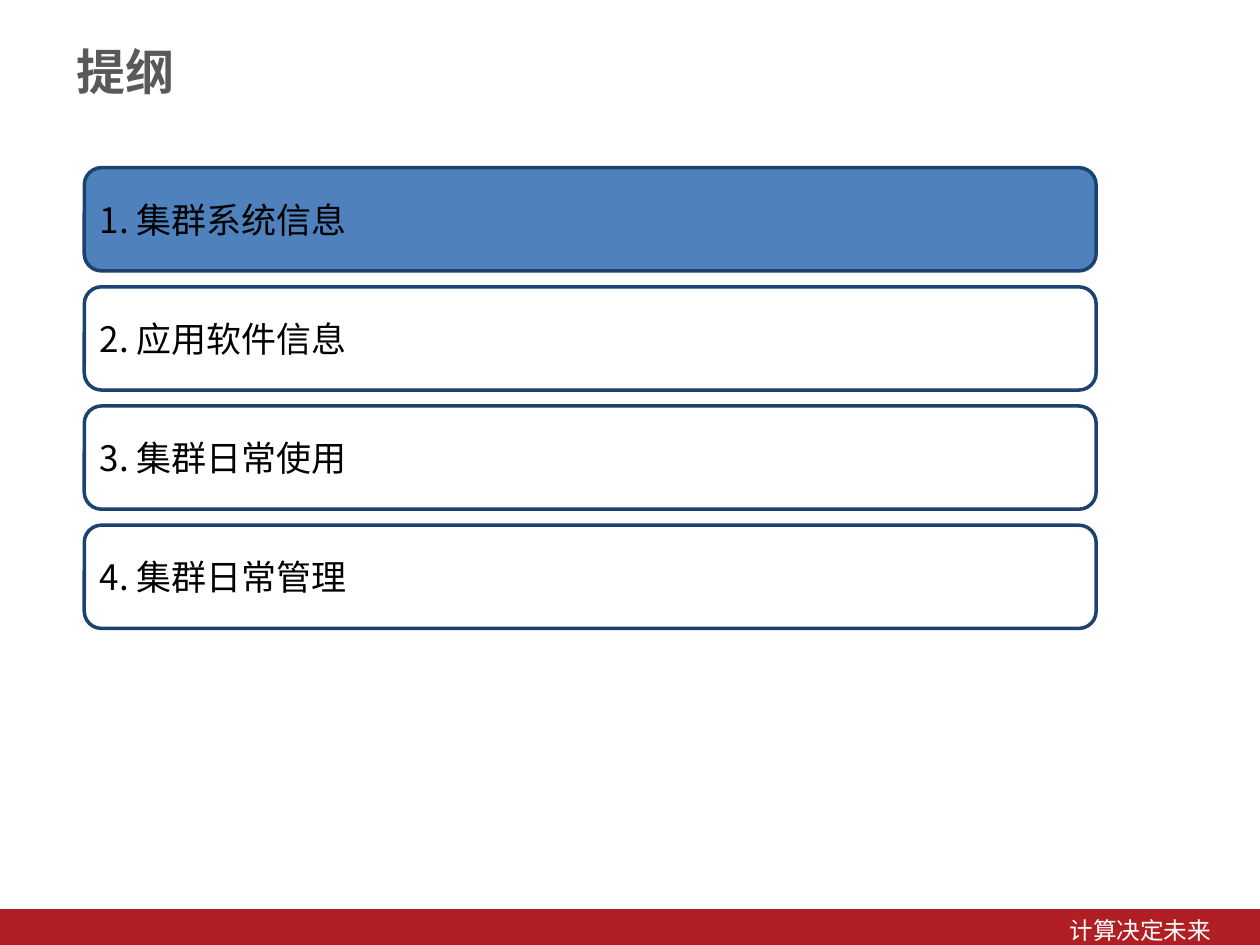
from lxml import etree
from pptx import Presentation
from pptx.dml.color import RGBColor
from pptx.enum.shapes import MSO_SHAPE
from pptx.enum.text import MSO_ANCHOR, PP_ALIGN
from pptx.oxml.ns import qn
from pptx.util import Pt

RECT, ROUNDED = MSO_SHAPE.RECTANGLE, MSO_SHAPE.ROUNDED_RECTANGLE
TOP, MIDDLE = MSO_ANCHOR.TOP, MSO_ANCHOR.MIDDLE
LEFT, RIGHT = PP_ALIGN.LEFT, PP_ALIGN.RIGHT

THEME = {
    "font": "Noto Sans CJK SC",
    "red": RGBColor(0xB0, 0x1F, 0x24),
    "blue": RGBColor(0x4F, 0x81, 0xBD),
    "navy": RGBColor(0x1C, 0x42, 0x71),
    "gray": RGBColor(0x59, 0x59, 0x59),
    "black": RGBColor(0, 0, 0),
    "white": RGBColor(0xFF, 0xFF, 0xFF),
    "title_size": Pt(28),
    "item_size": Pt(20),
    "footer_size": Pt(13.5),
}


def write(box, text, size, color, bold=False, align=LEFT, anchor=TOP, inset=(7.2, 3.6)):
    """Fill a box with one formatted paragraph; inset is (sides, top and bottom)."""
    frame = box.text_frame
    across, down = (Pt(value) for value in inset)
    layout = {"word_wrap": True, "vertical_anchor": anchor, "margin_left": across,
              "margin_right": across, "margin_top": down, "margin_bottom": down}
    for name, value in layout.items():
        setattr(frame, name, value)
    para = frame.paragraphs[0]
    para.alignment = align
    span = para.add_run()
    span.text = text
    for name, value in {"name": THEME["font"], "size": size, "bold": bold}.items():
        setattr(span.font, name, value)
    span.font.color.rgb = color
    # East Asian characters take their own typeface element
    east_asian = etree.SubElement(span.font._element, qn("a:ea"))
    east_asian.set("typeface", THEME["font"])


def add_panel(page, kind, left, top, width, height, fill):
    panel = page.shapes.add_shape(kind, Pt(left), Pt(top), Pt(width), Pt(height))
    panel.shadow.inherit = False
    panel.fill.solid()
    panel.fill.fore_color.rgb = fill
    panel.line.fill.background()
    return panel


deck = Presentation()
deck.slide_width, deck.slide_height = Pt(720), Pt(540)
page = deck.slides.add_slide(deck.slide_layouts[5])

# Footer band with motto
add_panel(page, RECT, 0, 519.6, 720, 20.4, THEME["red"])
motto = page.shapes.add_textbox(Pt(563), Pt(521.3), Pt(133.2), Pt(20.9))
write(motto, "计算决定未来", THEME["footer_size"], THEME["white"],
      align=RIGHT, inset=(4.3, 2.2))

# Title
title = page.shapes.title
title.left, title.top, title.width, title.height = Pt(36.7), Pt(20.2), Pt(519), Pt(44.6)
write(title, "提纲", THEME["title_size"], THEME["gray"], bold=True)

# Agenda: the current section is highlighted
items = ["集群系统信息", "应用软件信息", "集群日常使用", "集群日常管理"]
current = 0
first_top, pitch = 95.8, 68.1
left, width, height = 48.2, 578.2, 59
pad = 2.9
for index, item in enumerate(items):
    top = first_top + index * pitch
    fill = THEME["blue"] if index == current else THEME["white"]
    panel = add_panel(page, ROUNDED, left, top, width, height, fill)
    panel.line.color.rgb = THEME["navy"]
    panel.line.width = Pt(2)
    label = page.shapes.add_textbox(Pt(left + pad), Pt(top + pad),
                                    Pt(width - 2 * pad), Pt(height - 2 * pad))
    write(label, f"{index + 1}. {item}", THEME["item_size"], THEME["black"],
          anchor=MIDDLE, inset=(5.8, 5.8))

deck.save("out.pptx")
